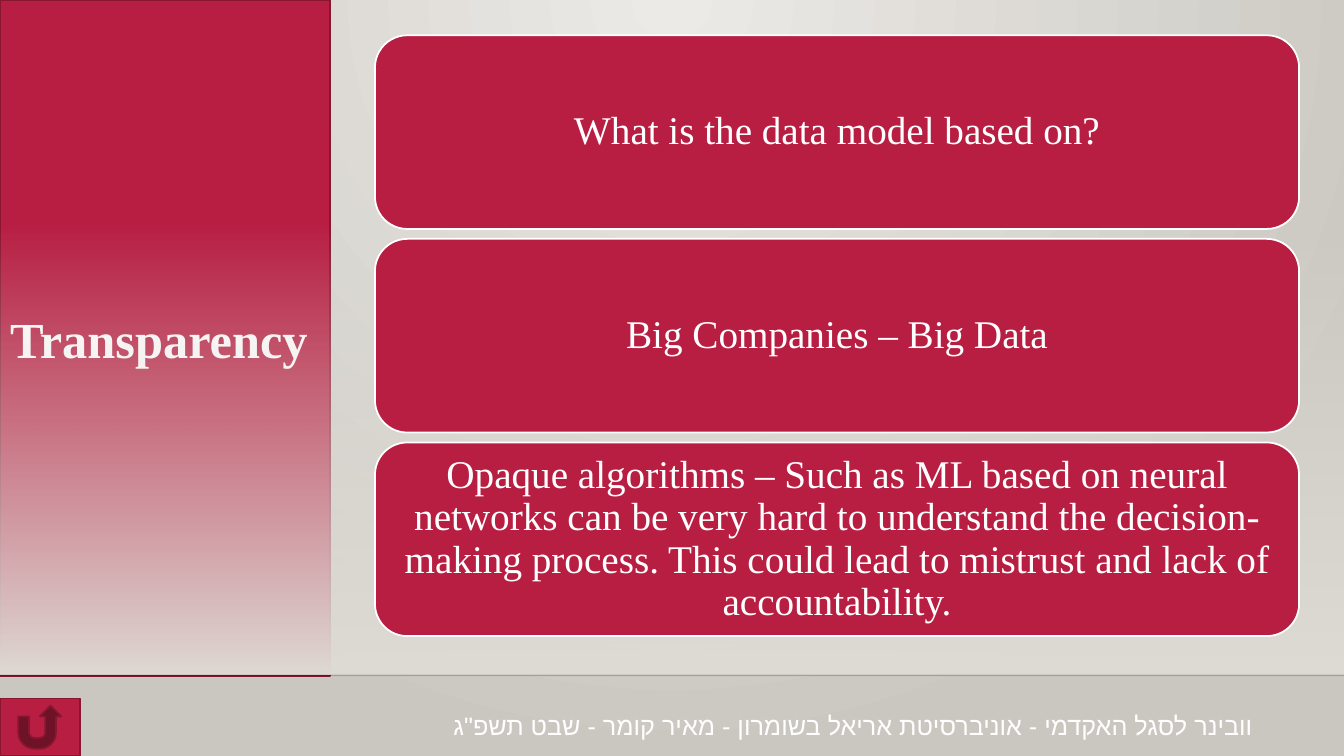
from dataclasses import dataclass

from lxml import etree
from pptx import Presentation
from pptx.dml.color import RGBColor
from pptx.enum.shapes import MSO_CONNECTOR, MSO_SHAPE
from pptx.enum.text import MSO_ANCHOR, MSO_AUTO_SIZE, PP_ALIGN
from pptx.oxml.ns import qn
from pptx.util import Cm, Pt

STRAIGHT = MSO_CONNECTOR.STRAIGHT
RECTANGLE = MSO_SHAPE.RECTANGLE
ROUNDED = MSO_SHAPE.ROUNDED_RECTANGLE
RETURN_BUTTON = MSO_SHAPE.ACTION_BUTTON_RETURN
MIDDLE = MSO_ANCHOR.MIDDLE
NO_AUTOFIT = MSO_AUTO_SIZE.NONE
LEFT, CENTER = PP_ALIGN.LEFT, PP_ALIGN.CENTER

COLORS = {
    "crimson": "B71E42",
    "dark_crimson": "871631",
    "white": "FFFFFF",
    "glow": "ECEAE7",
    "stone": "CAC7C1",
    "wall": "DFDBD5",
    "floor_line": "000001",
}
SERIF, SANS = "Times New Roman", "Arial"
SLIDE_WIDTH, SLIDE_HEIGHT = 33.87, 19.05
FLOOR_TOP = 17.02
CARD_HEIGHT, CARD_PITCH = 4.88, 5.13


@dataclass(frozen=True)
class Box:
    left: float
    top: float
    width: float
    height: float

    def lengths(self) -> tuple:
        return Cm(self.left), Cm(self.top), Cm(self.width), Cm(self.height)


@dataclass(frozen=True)
class Card:
    text: str
    box: Box


CARD_TEXTS = (
    "What is the data model based on?",
    "Big Companies – Big Data",
    "Opaque algorithms – Such as ML based on neural networks can be very hard "
    "to understand the decision-making process. This could lead to mistrust "
    "and lack of accountability.",
)
CARDS = [
    Card(text, Box(9.45, 0.89 + row * CARD_PITCH, 23.29, CARD_HEIGHT))
    for row, text in enumerate(CARD_TEXTS)
]


def color(name: str) -> RGBColor:
    return RGBColor.from_string(COLORS[name])


def paint(shape, outline: str) -> None:
    shape.fill.solid()
    shape.fill.fore_color.rgb = color("crimson")
    shape.line.color.rgb = color(outline)
    shape.line.width = Pt(1.25)


def add_block(slide, kind, box: Box, outline: str):
    block = slide.shapes.add_shape(kind, *box.lengths())
    block.shadow.inherit = False
    paint(block, outline)
    return block


def write(shape, text: str, size: int, face: str, align, bold: bool = False):
    frame = shape.text_frame
    frame.word_wrap = True
    frame.auto_size = NO_AUTOFIT
    frame.vertical_anchor = MIDDLE
    frame.text = text
    paragraph = frame.paragraphs[0]
    paragraph.alignment = align
    font = paragraph.font
    font.size, font.name, font.bold = Pt(size), face, bold
    font.color.rgb = color("white")
    return paragraph


def set_gradient(fill, first: str, last: str) -> None:
    fill.gradient()
    for stop, name in zip(fill.gradient_stops, (first, last)):
        stop.color.rgb = color(name)


def set_alpha(parent, percent: int) -> None:
    first_color = next(parent.iter(qn("a:srgbClr")))
    etree.SubElement(first_color, qn("a:alpha"), val=str(percent * 1000))


def add_backdrop(slide) -> None:
    # Radial glow from the top centre
    set_gradient(slide.background.fill, "glow", "stone")
    gradient = next(slide.element.iter(qn("a:gradFill")))
    linear = gradient.find(qn("a:lin"))
    circle = etree.Element(qn("a:path"), path="circle")
    etree.SubElement(circle, qn("a:fillToRect"),
                     l="43000", t="0", r="43000", b="100000")
    gradient.replace(linear, circle)

    # Wall fading in towards the floor
    wall = slide.shapes.add_shape(
        RECTANGLE, *Box(0, 5.61, SLIDE_WIDTH, 11.4).lengths())
    wall.shadow.inherit = False
    wall.line.fill.background()
    set_gradient(wall.fill, "wall", "wall")
    wall.fill.gradient_angle = 270
    set_alpha(wall.element.spPr, 0)

    # Floor line
    floor = slide.shapes.add_connector(
        STRAIGHT, 0, Cm(FLOOR_TOP), Cm(SLIDE_WIDTH), Cm(FLOOR_TOP))
    floor.line.color.rgb = color("floor_line")
    floor.line.width = Pt(1)
    set_alpha(floor.element.spPr, 20)
    etree.SubElement(floor.element.spPr, qn("a:effectLst"))


def add_card(slide, card: Card) -> None:
    block = add_block(slide, ROUNDED, card.box, "white")
    frame = block.text_frame
    frame.margin_left = frame.margin_right = Cm(0.3)
    frame.margin_top = frame.margin_bottom = Cm(0.15)
    write(block, card.text, 28, SERIF, CENTER).line_spacing = 0.9


def add_title(slide) -> None:
    title = slide.shapes.title
    title.left, title.top, title.width, title.height = Box(
        0, 0, 8.31, 17.04).lengths()
    paint(title, "dark_crimson")
    write(title, "Transparency", 36, SERIF, LEFT, bold=True)


def add_footer(slide) -> None:
    footer = slide.shapes.add_textbox(*Box(11.18, 17.91, 22.25, 0.74).lengths())
    webinar = write(
        footer,
        'וובינר לסגל האקדמי - אוניברסיטת אריאל בשומרון - מאיר קומר - שבט תשפ"ג',
        18, SANS, LEFT)
    # Hebrew takes the complex-script face
    latin = next(webinar.font._element.iter(qn("a:latin"))) \
        if hasattr(webinar.font, "_element") \
        else next(footer.element.iter(qn("a:latin")))
    latin.addnext(etree.Element(qn("a:cs"), typeface=SANS))


def main() -> None:
    deck = Presentation()
    deck.slide_width, deck.slide_height = Cm(SLIDE_WIDTH), Cm(SLIDE_HEIGHT)
    slide = deck.slides.add_slide(deck.slide_layouts[5])

    add_backdrop(slide)
    for card in CARDS:
        add_card(slide, card)
    add_title(slide)
    add_footer(slide)
    add_block(slide, RETURN_BUTTON, Box(0, 17.6, 2.01, 1.45), "dark_crimson")

    deck.save("out.pptx")


if __name__ == "__main__":
    main()
